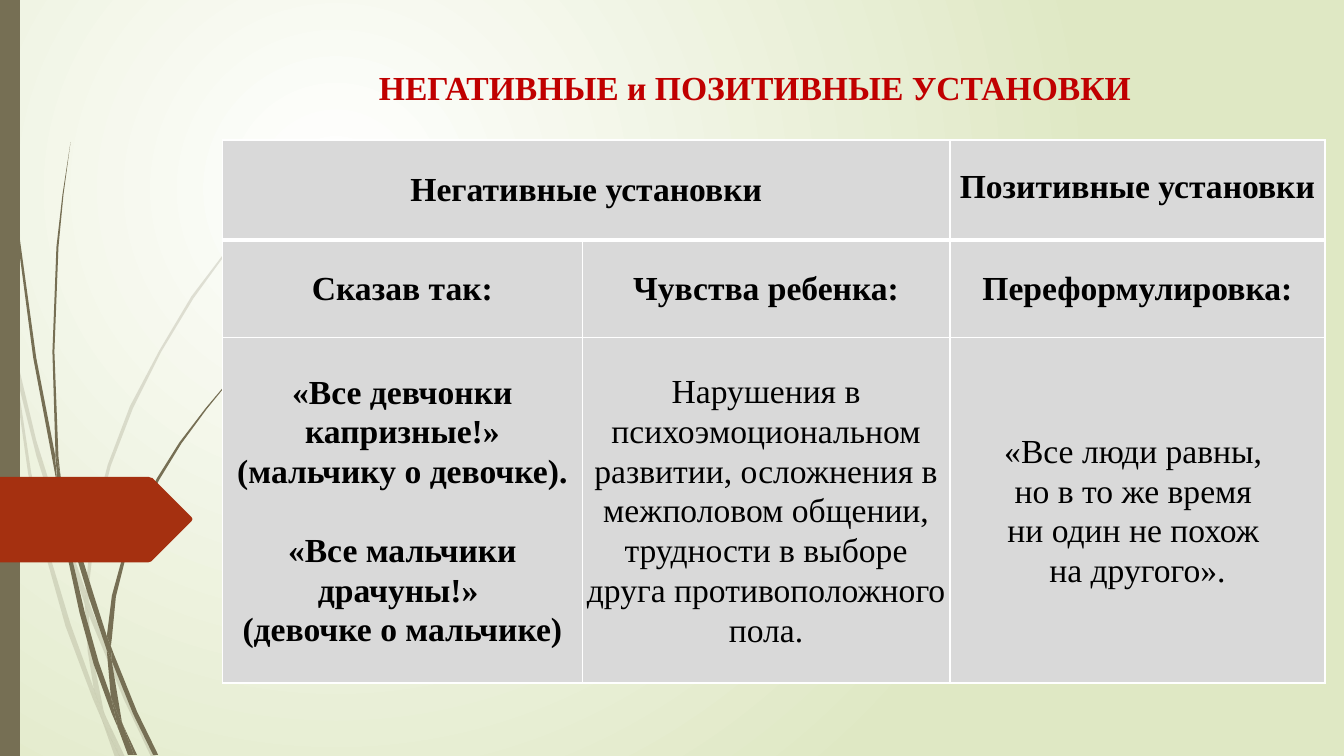
from lxml import etree
from pptx import Presentation
from pptx.dml.color import RGBColor
from pptx.enum.text import MSO_ANCHOR, PP_ALIGN
from pptx.oxml.ns import qn
from pptx.util import Cm, Pt

CENTER = PP_ALIGN.CENTER
MIDDLE = MSO_ANCHOR.MIDDLE
FONT = "Times New Roman"
COLORS = {
    "white": "FFFFFF", "meadow": "DFE8C4", "stem": "766F54", "tag": "A53010",
    "title": "C00000", "cell": "D9D9D9", "text": "000000",
}
GRID = Cm(0.0254)  # outlines are given in hundredths of an inch

# Outline points of the grass behind the table
PALE_BLADES = [
    [(11, 350), (9, 322), (0, 282), (0, 299), (10, 344)],
    [(58, 522), (84, 599), (85, 586), (62, 520), (36, 437), (14, 345),
     (17, 376), (36, 452)],
    [(92, 607), (88, 596), (88, 610), (123, 694), (150, 751), (155, 751),
     (127, 692)],
    [(119, 751), (124, 751), (105, 711)],
    [(93, 683), (70, 619), (48, 546), (31, 469), (17, 376), (11, 350),
     (28, 470), (44, 546), (65, 621), (92, 693), (101, 714), (99, 707)],
    [(84, 599), (87, 646), (93, 683), (96, 692), (105, 711), (103, 706),
     (91, 646), (88, 610), (88, 608)],
    [(88, 584), (95, 522), (110, 462), (132, 405), (160, 349), (192, 296),
     (229, 245), (268, 198), (290, 175), (312, 154), (312, 153), (289, 175),
     (268, 197), (228, 244), (190, 294), (158, 348), (129, 403), (107, 461),
     (91, 522), (85, 584), (85, 586), (88, 596)],
    [(101, 714), (114, 751), (119, 751)],
    [(88, 608), (88, 596), (85, 586), (84, 599)],
    [(96, 692), (93, 683), (99, 707), (101, 714), (119, 751), (105, 711)],
]
DARK_BLADES = [
    [(7, 110), (17, 233), (33, 355), (56, 477), (57, 481), (55, 457),
     (55, 453), (36, 355), (19, 232), (8, 109), (5, 48), (4, 0), (3, 0),
     (4, 48)],
    [(88, 592), (106, 645), (106, 631), (93, 590), (75, 532), (60, 472),
     (64, 505), (75, 549)],
    [(113, 649), (110, 641), (111, 656), (132, 708), (152, 749), (157, 749),
     (136, 706)],
    [(110, 691), (98, 657), (84, 607), (72, 556), (64, 505), (57, 477),
     (68, 557), (79, 608), (93, 659), (111, 708), (117, 722), (116, 717)],
    [(60, 472), (58, 453), (54, 349), (58, 245), (63, 193), (70, 141),
     (62, 193), (56, 245), (52, 349), (55, 449)],
    [(133, 749), (136, 749), (122, 719)],
    [(57, 477), (64, 505), (60, 472), (55, 449), (55, 453)],
    [(111, 633), (115, 592), (125, 552), (140, 513), (158, 476), (180, 440),
     (205, 406), (231, 374), (245, 359), (261, 344), (260, 344), (245, 358),
     (231, 373), (204, 405), (178, 439), (156, 474), (137, 512), (122, 551),
     (111, 591), (106, 631), (110, 641)],
    [(117, 722), (127, 749), (131, 749)],
    [(106, 645), (110, 691), (116, 706), (122, 719), (121, 716), (111, 656),
     (109, 651)],
    [(106, 645), (109, 651), (111, 656), (110, 641), (106, 631)],
    [(116, 706), (110, 691), (116, 717), (117, 722), (130, 749), (133, 749),
     (122, 719)],
]
TAG = [(0, 473), (147, 473), (150, 474), (151, 474), (190, 513), (191, 515),
       (190, 517), (151, 556), (150, 557), (147, 558), (0, 558)]
STRIP = [(0, 0), (20, 0), (20, 750), (0, 750)]

COLUMN_WIDTHS = [9.06, 9.27, 9.45]
ROW_HEIGHTS = [2.52, 2.46, 8.7]
ROWS = [
    [["Негативные установки"], [], ["Позитивные установки"]],
    [["Сказав так:"], ["Чувства ребенка:"], ["Переформулировка:"]],
    [
        ["«Все девчонки капризные!» (мальчику о девочке).",
         "«Все мальчики драчуны!» ", "(девочке о мальчике)"],
        ["Нарушения в психоэмоциональном развитии, осложнения в межполовом "
         "общении, трудности в выборе друга противоположного пола."],
        ["«Все люди равны, ", "но в то же время ", "ни один не похож ",
         "на другого»."],
    ],
]


def add_outline(points, color, opacity=100):
    builder = slide.shapes.build_freeform(*points[0], scale=GRID)
    builder.add_line_segments(points[1:], close=True)
    shape = builder.convert_to_shape()
    shape.shadow.inherit = False
    shape.line.fill.background()
    shape.fill.solid()
    shape.fill.fore_color.rgb = RGBColor.from_string(COLORS[color])
    if opacity < 100:
        fill_color = shape.element.spPr.find(qn("a:solidFill"))[0]
        etree.SubElement(fill_color, qn("a:alpha"), val=str(opacity * 1000))


def add_text(paragraph, text, color, bold=True):
    paragraph.alignment = CENTER
    run = paragraph.add_run()
    run.text = text
    run.font.name = FONT
    run.font.size = Pt(24)
    run.font.bold = bold
    run.font.color.rgb = RGBColor.from_string(COLORS[color])


presentation = Presentation()
presentation.slide_width = Cm(33.87)
presentation.slide_height = Cm(19.05)
slide = presentation.slides.add_slide(presentation.slide_layouts[6])

# Background: light circle fading to green
background = slide.background.fill
background.gradient()
for stop, name in zip(background.gradient_stops, ["white", "meadow"]):
    stop.color.rgb = RGBColor.from_string(COLORS[name])
linear = next(slide.element.iter(qn("a:lin")))
circle = etree.Element(qn("a:path"), path="circle")
etree.SubElement(circle, qn("a:fillToRect"),
                 l="50000", t="50000", r="100000", b="100000")
linear.getparent().replace(linear, circle)

# Grass, side strip and tag
for blade in PALE_BLADES:
    add_outline(blade, "stem", 20)
for blade in DARK_BLADES:
    add_outline(blade, "stem")
add_outline(STRIP, "stem")
add_outline(TAG, "tag")

# Table
frame = slide.shapes.add_table(3, 3, Cm(5.61), Cm(3.53),
                               Cm(sum(COLUMN_WIDTHS)), Cm(sum(ROW_HEIGHTS)))
table = frame.table
for column, width in zip(table.columns, COLUMN_WIDTHS):
    column.width = Cm(width)
for row, height in zip(table.rows, ROW_HEIGHTS):
    row.height = Cm(height)
table.cell(0, 0).merge(table.cell(0, 1))

for row_index, row in enumerate(ROWS):
    for column_index, lines in enumerate(row):
        cell = table.cell(row_index, column_index)
        is_body = row_index == 2
        margin = Cm(0.08 if is_body else 0.03)
        cell.margin_left = cell.margin_right = margin
        cell.margin_top = cell.margin_bottom = margin
        cell.vertical_anchor = MIDDLE
        properties = cell._tc.get_or_add_tcPr()
        for side in ("L", "R", "T", "B"):
            under_header = (row_index, side) in [(0, "B"), (1, "T")]
            border = etree.SubElement(properties, qn(f"a:ln{side}"),
                                      w=str(Pt(3 if under_header else 1)))
            border_fill = etree.SubElement(border, qn("a:solidFill"))
            etree.SubElement(border_fill, qn("a:srgbClr"), val=COLORS["white"])
        cell.fill.solid()
        cell.fill.fore_color.rgb = RGBColor.from_string(COLORS["cell"])
        text_frame = cell.text_frame
        for line_index, line in enumerate(lines):
            paragraph = text_frame.add_paragraph() if line_index else text_frame.paragraphs[0]
            if is_body:
                paragraph.line_spacing = 1.07
            add_text(paragraph, line, "text", not is_body or column_index == 0)

table.cell(0, 2).margin_bottom = Cm(0.2)
table.cell(2, 0).text_frame.paragraphs[1].space_before = Pt(28)

# Title
title = slide.shapes.add_textbox(Cm(4.83), Cm(1.55), Cm(28.4), Cm(1.27))
title.text_frame.word_wrap = True
title.text_frame.vertical_anchor = MIDDLE
add_text(title.text_frame.paragraphs[0], "НЕГАТИВНЫЕ и ПОЗИТИВНЫЕ УСТАНОВКИ", "title")

presentation.save("out.pptx")
